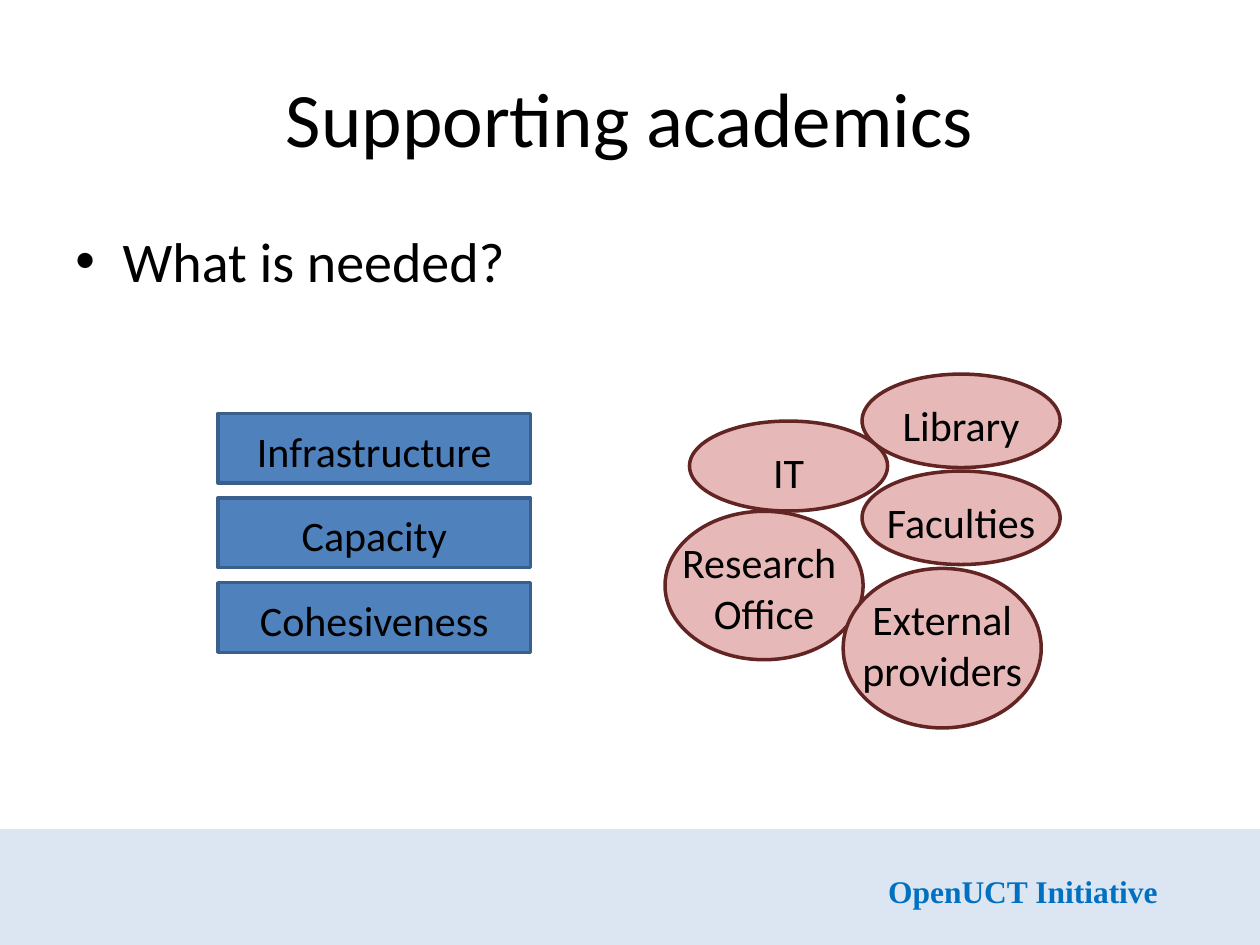
from dataclasses import dataclass

from lxml.etree import SubElement
from pptx import Presentation
from pptx.dml.color import RGBColor
from pptx.enum.shapes import MSO_SHAPE
from pptx.enum.text import MSO_ANCHOR, PP_ALIGN
from pptx.oxml.ns import qn
from pptx.util import Pt


@dataclass(frozen=True)
class Theme:
    font: str = "Calibri"
    footer_font: str = "Times New Roman"
    ink: str = "000000"
    footer_ink: str = "0070C0"
    band: str = "DCE6F2"
    need_fill: str = "4F81BD"
    need_line: str = "3A5F8C"
    partner_fill: str = "E6B9B8"
    partner_line: str = "632523"
    title_size: int = 44
    body_size: int = 32
    label_size: int = 24
    footer_size: int = 18
    outline: int = 2


class SlideBuilder:
    def __init__(self, slide, theme):
        self.slide = slide
        self.theme = theme

    def shape(self, kind, left, top, width, height, fill, line=None):
        shape = self.slide.shapes.add_shape(
            kind, Pt(left), Pt(top), Pt(width), Pt(height))
        shape.shadow.inherit = False
        shape.fill.solid()
        shape.fill.fore_color.rgb = RGBColor.from_string(fill)
        if line:
            shape.line.color.rgb = RGBColor.from_string(line)
            shape.line.width = Pt(self.theme.outline)
        else:
            shape.line.fill.background()

    def text(self, text, left, top, width, height, size, align=PP_ALIGN.CENTER,
             anchor=MSO_ANCHOR.TOP, font=None, color=None, bold=False,
             wrap=True, bullet_indent=0):
        box = self.slide.shapes.add_textbox(
            Pt(left), Pt(top), Pt(width), Pt(height))
        frame = box.text_frame
        frame.word_wrap = wrap
        frame.vertical_anchor = anchor
        frame.text = text
        for para in frame.paragraphs:
            if bullet_indent:
                self.bullet(para, bullet_indent)
            para.alignment = align
            for span in para.runs:
                span.font.name = font or self.theme.font
                span.font.size = Pt(size)
                span.font.bold = bold
                span.font.color.rgb = RGBColor.from_string(color or self.theme.ink)

    def bullet(self, para, indent):
        properties = para._p.get_or_add_pPr()
        properties.set("marL", str(Pt(indent)))
        properties.set("indent", str(-Pt(indent)))
        SubElement(properties, qn("a:buFont"), typeface="Arial")
        SubElement(properties, qn("a:buChar"), char="•")

    def need(self, label, left, top):
        theme = self.theme
        self.shape(MSO_SHAPE.RECTANGLE, left, top, 178.6, 39.8,
                   theme.need_fill, theme.need_line)
        self.text(label, left + 8.6, top + 3.2, 161.4, 36, theme.label_size)

    def partner(self, label, left, top, height):
        """Draw an ellipse with a wider label centred over it."""
        theme = self.theme
        width, label_width = 113.2, 175.6
        self.shape(MSO_SHAPE.OVAL, left, top, width, height,
                   theme.partner_fill, theme.partner_line)
        self.text(label, left + (width - label_width) / 2, top + 11,
                  label_width, 36, theme.label_size)


def main():
    deck = Presentation()
    deck.slide_width, deck.slide_height = Pt(720), Pt(540)
    theme = Theme()
    page = SlideBuilder(deck.slides.add_slide(deck.slide_layouts[6]), theme)

    page.shape(MSO_SHAPE.RECTANGLE, 0, 473.8, 720, 66.2, theme.band)
    page.text("OpenUCT Initiative", 500.4, 494.6, 170, 29, theme.footer_size,
              align=PP_ALIGN.LEFT, font=theme.footer_font,
              color=theme.footer_ink, bold=True, wrap=False)
    page.text("Supporting academics", 36, 21.6, 648, 90, theme.title_size,
              anchor=MSO_ANCHOR.MIDDLE)
    page.text("What is needed?", 36, 126, 648, 356.4, theme.body_size,
              align=PP_ALIGN.LEFT, bullet_indent=27)

    for row, need in enumerate(("Infrastructure", "Capacity", "Cohesiveness")):
        page.need(need, 124.6, 236.2 + row * 48.4)

    partners = (
        ("IT", 394, 240.6, 51.4),
        ("Research \nOffice", 380, 292.2, 84.8),
        ("Library", 492.6, 213.8, 53.4),
        ("Faculties", 492.6, 269.2, 53.4),
        ("External providers", 481.8, 324.8, 91.2),
    )
    for partner in partners:
        page.partner(*partner)

    deck.save("out.pptx")


if __name__ == "__main__":
    main()
